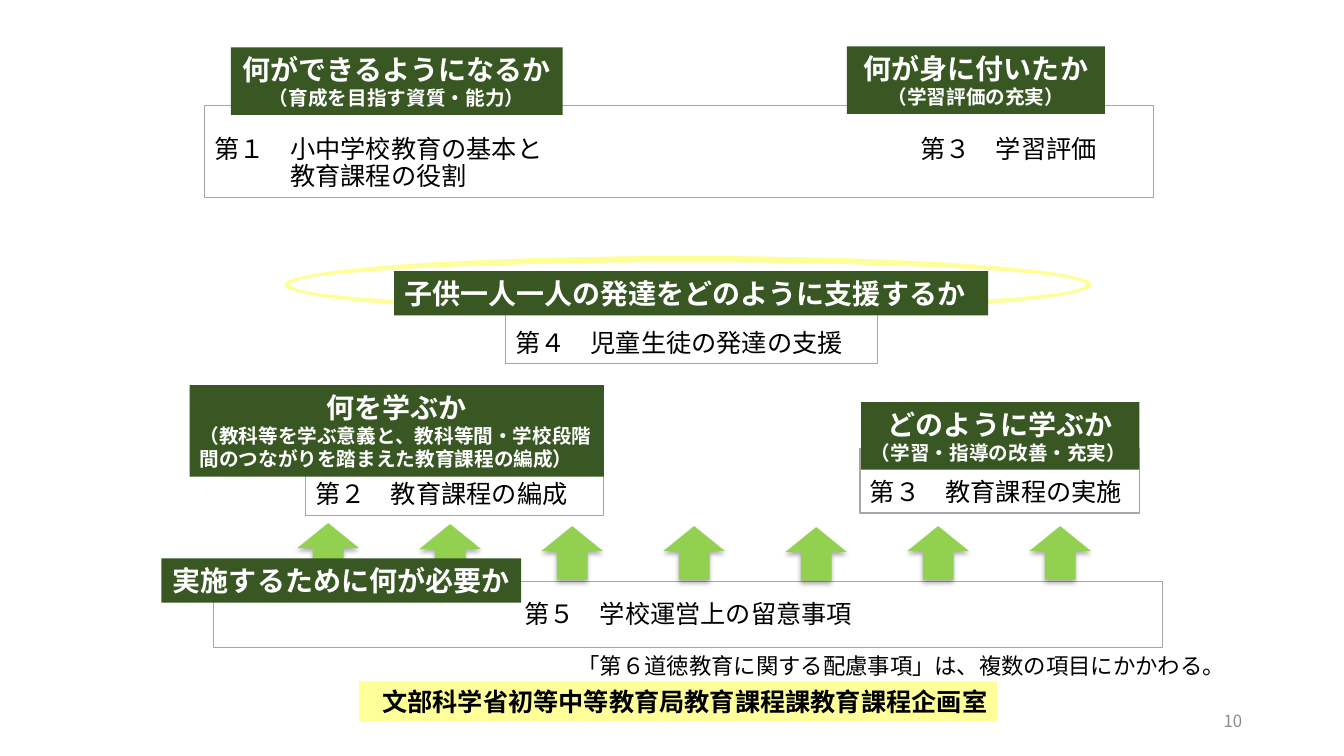
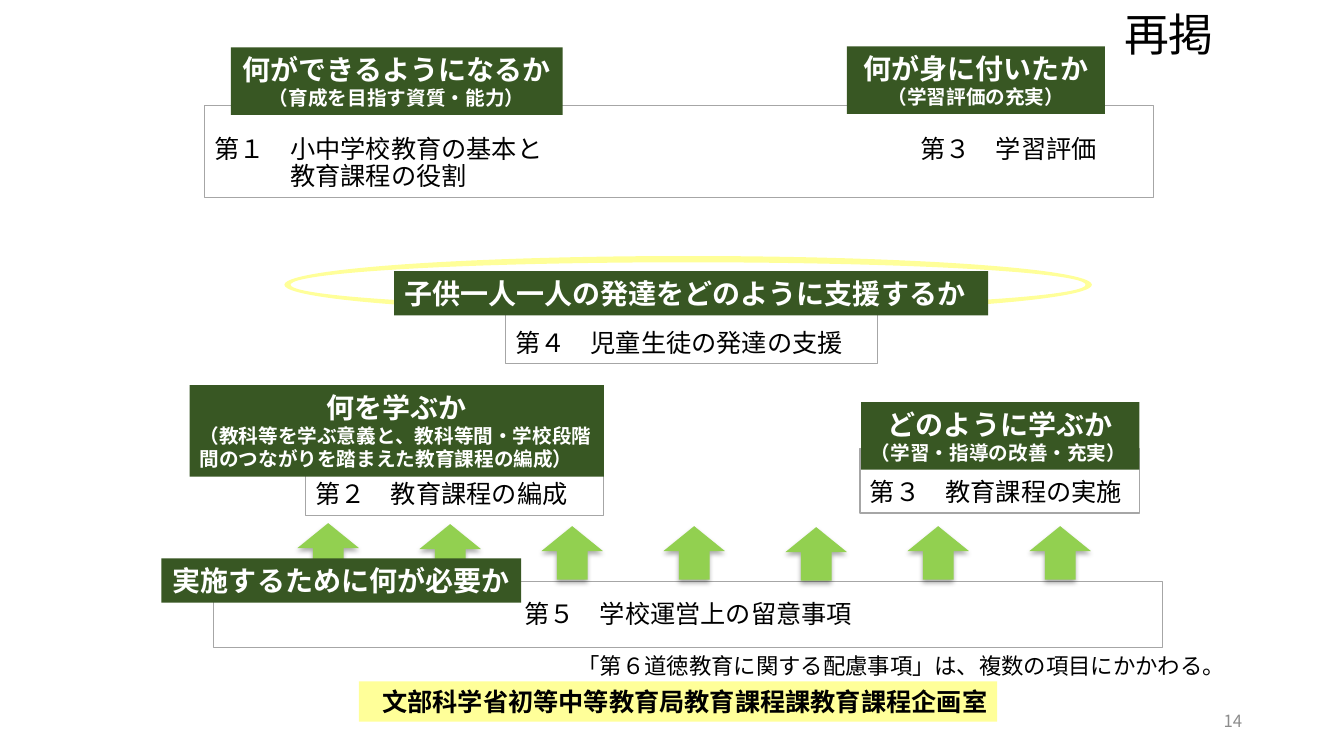
from dataclasses import dataclass

from lxml import etree
from pptx import Presentation
from pptx.dml.color import RGBColor as Rgb
from pptx.enum.shapes import MSO_SHAPE as Preset
from pptx.enum.text import MSO_ANCHOR as Anchor, MSO_AUTO_SIZE as AutoSize, PP_ALIGN as Align
from pptx.oxml.ns import qn
from pptx.util import Inches, Pt


@dataclass(frozen=True)
class Theme:
    font: str = "Noto Sans CJK JP"
    green: str = "385723"
    arrow: str = "92D050"
    yellow: str = "FFFF99"
    border: str = "A6A6A6"
    muted: str = "8C8C8C"
    black: str = "000000"
    white: str = "FFFFFF"
    stamp: int = 32
    heading: int = 20
    body: int = 18
    note: int = 16
    subheading: int = 14
    footer: int = 12
    leading: int = 19


THEME = Theme()
LABELS = [
    ((2.29, 0.47, 3.29, 0.67), "何ができるようになるか", "（育成を目指す資質・能力）", Align.CENTER, Align.CENTER, False),
    ((8.4, 0.46, 2.56, 0.67), "何が身に付いたか", "（学習評価の充実）", Align.CENTER, Align.CENTER, True),
    ((3.91, 2.69, 5.89, 0.44), "子供一人一人の発達をどのように支援するか", "", Align.LEFT, Align.LEFT, True),
    ((1.88, 3.82, 4.11, 0.91), "何を学ぶか",
     "（教科等を学ぶ意義と、教科等間・学校段階間のつながりを踏まえた教育課程の編成）", Align.CENTER, Align.LEFT, True),
    ((8.54, 3.99, 2.76, 0.67), "どのように学ぶか", "（学習・指導の改善・充実）", Align.CENTER, Align.LEFT, False),
    ((1.6, 5.54, 3.57, 0.44), "実施するために何が必要か", "", Align.CENTER, Align.CENTER, False),
]
CHAPTERS = [
    ((5.01, 2.97, 3.69, 0.64), "第４　児童生徒の発達の支援"),
    ((3.03, 4.47, 2.96, 0.64), "第２　教育課程の編成"),
    ((8.53, 4.45, 2.77, 0.64), "第３　教育課程の実施"),
]
ARROW_LEFT, ARROW_STEP = 2.95, 1.21
ARROW_TOPS = (5.19, 5.2, 5.22, 5.22, 5.23, 5.22, 5.22)


def inches(place):
    return [Inches(value) for value in place]


def add_panel(page, preset, place, fill, border=None):
    box = page.shapes.add_shape(preset, *inches(place))
    box.shadow.inherit = False
    box.fill.solid()
    box.fill.fore_color.rgb = Rgb.from_string(fill)
    if border:
        box.line.color.rgb = Rgb.from_string(border)
        box.line.width = Pt(0.75)
    else:
        box.line.fill.background()
    return box


def set_frame(box, wrap=True, top=0.05):
    frame = box.text_frame
    frame.word_wrap = wrap
    frame.auto_size = AutoSize.SHAPE_TO_FIT_TEXT
    frame.vertical_anchor = Anchor.TOP
    frame.margin_top = Inches(top)
    return frame


def add_para(frame, text, size, color, bold=False, align=Align.LEFT, leading=None):
    first = frame.paragraphs[0]
    para = frame.add_paragraph() if first.runs else first
    para.alignment = align
    if leading:
        para.line_spacing = Pt(leading)
    span = para.add_run()
    span.text = text
    font = span.font
    font.name = THEME.font
    font.size = Pt(size)
    font.bold = bold
    font.color.rgb = Rgb.from_string(color)
    etree.SubElement(span._r.get_or_add_rPr(), qn("a:ea"), typeface=THEME.font)
    return para


def add_label(page, place, title, detail, title_align, detail_align, wrap):
    frame = set_frame(add_panel(page, Preset.RECTANGLE, place, THEME.green), wrap)
    add_para(frame, title, THEME.heading, THEME.white, True, title_align)
    if detail:
        add_para(frame, detail, THEME.subheading, THEME.white, True, detail_align)


def add_chapter(page, place, lines, top=0.31, align=Align.LEFT):
    box = add_panel(page, Preset.RECTANGLE, place, THEME.white, THEME.border)
    frame = set_frame(box, top=top)
    return [add_para(frame, line, THEME.body, THEME.black, align=align, leading=THEME.leading)
            for line in lines]


def add_goals(page):
    first, second = add_chapter(
        page, (2.03, 1.05, 9.41, 0.91),
        ["第１　小中学校教育の基本と\t第３　学習評価", "教育課程の役割"])
    tabs = etree.SubElement(first._p.get_or_add_pPr(), qn("a:tabLst"))
    etree.SubElement(tabs, qn("a:tab"), pos=str(Inches(7)), algn="l")
    second._p.get_or_add_pPr().set("marL", str(Inches(0.75)))


def add_arrow(page, left, top):
    arrow = add_panel(page, Preset.UP_ARROW, (left, top, 0.61, 0.53), THEME.arrow)
    arrow.adjustments[0] = 0.5
    arrow.adjustments[1] = 0.467
    effects = arrow._element.spPr.find(qn("a:effectLst"))
    shadow = etree.SubElement(effects, qn("a:outerShdw"), blurRad=str(Pt(3.5)),
                              dist=str(Pt(2.2)), dir="5400000", rotWithShape="0")
    color = etree.SubElement(shadow, qn("a:srgbClr"), val=THEME.black)
    etree.SubElement(color, qn("a:alpha"), val="32000")


def add_text(page, place, text, size, color, align=Align.LEFT):
    frame = set_frame(page.shapes.add_textbox(*inches(place)))
    add_para(frame, text, size, color, align=align)
    return frame


def add_page(deck, number, stamp=""):
    page = deck.slides.add_slide(deck.slide_layouts[6])
    ring = add_panel(page, Preset.DONUT, (2.82, 2.54, 8.01, 0.57), THEME.yellow)
    ring.adjustments[0] = 0.109
    add_goals(page)
    for place, text in CHAPTERS:
        add_chapter(page, place, [text])
    add_chapter(page, (2.12, 5.77, 9.41, 0.65), ["第５　学校運営上の留意事項"], 0.2, Align.CENTER)
    for index, top in enumerate(ARROW_TOPS):
        add_arrow(page, ARROW_LEFT + index * ARROW_STEP, top)
    for label in LABELS:
        add_label(page, *label)
    add_text(page, (5.63, 6.42, 7.06, 0.37), "「第６道徳教育に関する配慮事項」は、複数の項目にかかわる。",
             THEME.note, THEME.black)
    office = set_frame(add_panel(page, Preset.RECTANGLE, (3.56, 6.76, 6.33, 0.4), THEME.yellow))
    add_para(office, "文部科学省初等中等教育局教育課程課教育課程企画室",
             THEME.body, THEME.black, True, Align.RIGHT)
    footer = add_text(page, (9.42, 6.95, 3, 0.4), str(number), THEME.footer, THEME.muted, Align.RIGHT)
    footer.auto_size = AutoSize.NONE
    footer.vertical_anchor = Anchor.MIDDLE
    if stamp:
        add_text(page, (11.05, 0.02, 1.1, 0.64), stamp, THEME.stamp, THEME.black)


def main():
    deck = Presentation()
    deck.slide_width = Inches(13.33)
    deck.slide_height = Inches(7.5)
    add_page(deck, 10)
    add_page(deck, 14, "再掲")
    deck.save("out.pptx")


if __name__ == "__main__":
    main()
